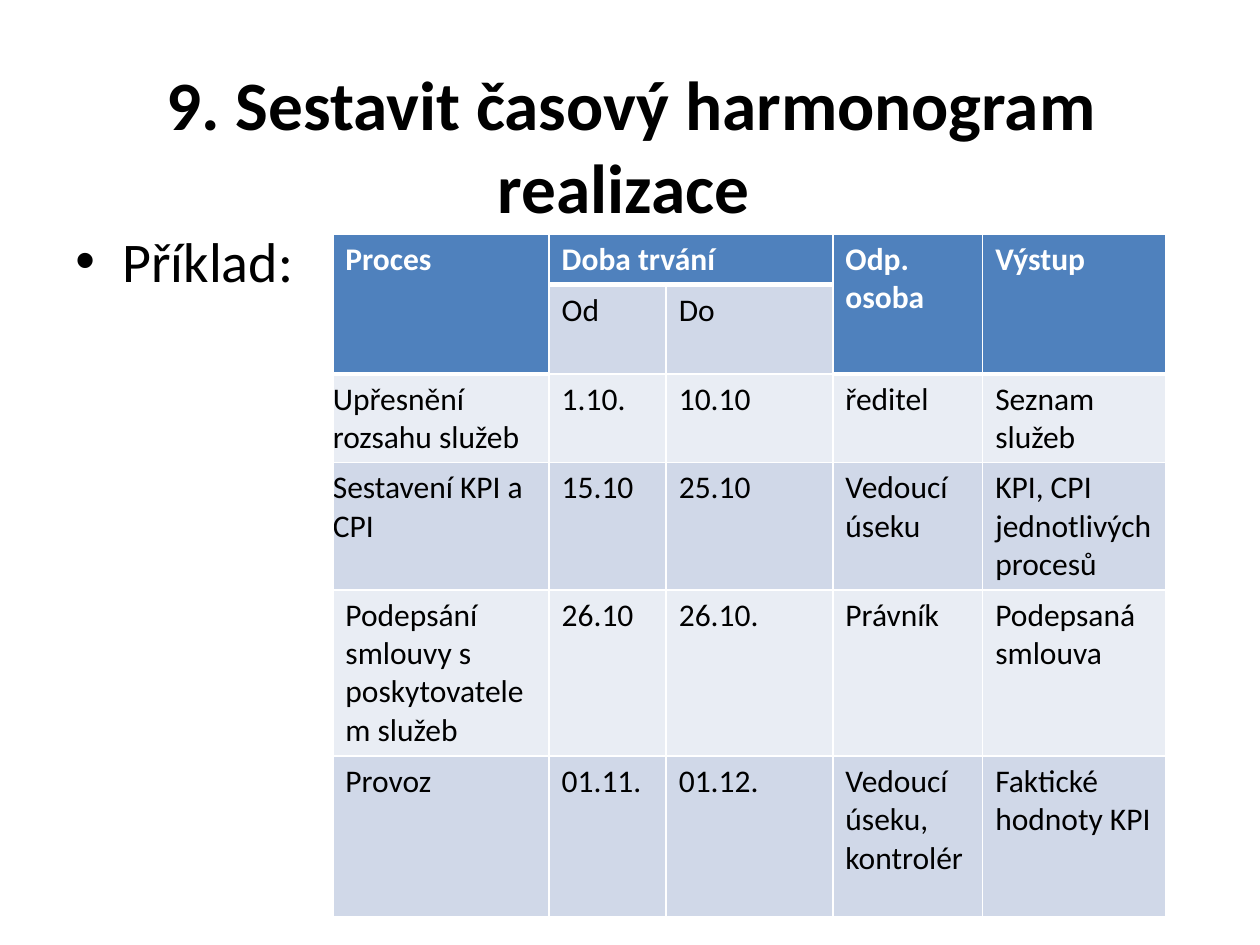
from lxml.etree import SubElement
from pptx import Presentation
from pptx.dml.color import RGBColor
from pptx.enum.text import MSO_ANCHOR as Anchor, PP_ALIGN as Align
from pptx.oxml.ns import qn
from pptx.util import Cm, Pt

# Content
TITLE = "9. Sestavit časový harmonogram realizace "
BODY = "Příklad:"
ROWS = [
    ["Proces", "Doba trvání", "", "Odp. osoba", "Výstup"],
    ["", "Od", "Do", "", ""],
    ["Upřesnění rozsahu služeb", "1.10.", "10.10", "ředitel", "Seznam služeb"],
    ["Sestavení KPI a CPI", "15.10", "25.10", "Vedoucí úseku",
     "KPI, CPI jednotlivých procesů"],
    ["Podepsání smlouvy s poskytovatelem služeb", "26.10", "26.10.", "Právník",
     "Podepsaná smlouva"],
    ["Provoz", "01.11.", "01.12.", "Vedoucí úseku, kontrolér",
     "Faktické hodnoty KPI"],
]
COLUMN_WIDTHS = [4.36, 2.36, 3.36, 3.02, 3.7]
ROW_HEIGHTS = [1.02, 1.8, 1.77, 2.57, 3.35, 3.25]
MERGES = [((0, 0), (1, 0)), ((0, 1), (0, 2)), ((0, 3), (1, 3)), ((0, 4), (1, 4))]
FLUSH_CELLS = {(2, 0), (3, 0)}

FONT = "Calibri"
BLACK, WHITE, BLUE = "000000", "FFFFFF", "4F81BD"
BANDS = ["E9EDF4", "D0D8E8"]


def color(value):
    return RGBColor.from_string(value)


def add_text(paragraph, text, size, fill=BLACK, bold=False):
    run = paragraph.add_run()
    run.text = text
    run.font.name, run.font.size, run.font.bold = FONT, Pt(size), bold
    run.font.color.rgb = color(fill)


def add_box(slide, left, top, width, height, anchor):
    box = slide.shapes.add_textbox(Cm(left), Cm(top), Cm(width), Cm(height))
    frame = box.text_frame
    frame.word_wrap = True
    frame.vertical_anchor = anchor
    return frame.paragraphs[0]


def set_borders(cell, bottom):
    properties = cell._tc.get_or_add_tcPr()
    for side, points in (("L", 1), ("R", 1), ("T", 1), ("B", bottom)):
        line = SubElement(properties, qn(f"a:ln{side}"), w=str(Pt(points)))
        fill = SubElement(line, qn("a:solidFill"))
        SubElement(fill, qn("a:srgbClr"), val=WHITE)


presentation = Presentation()
presentation.slide_width, presentation.slide_height = Cm(25.4), Cm(19.05)
slide = presentation.slides.add_slide(presentation.slide_layouts[6])

# Title
paragraph = add_box(slide, 1.3, 1.32, 22.86, 3.18, Anchor.MIDDLE)
paragraph.alignment = Align.CENTER
add_text(paragraph, TITLE, 39.6, bold=True)

# Bulleted body text
paragraph = add_box(slide, 1.27, 4.45, 22.86, 12.57, Anchor.TOP)
properties = paragraph._p.get_or_add_pPr()
properties.set("marL", str(Cm(0.95)))
properties.set("indent", str(Cm(-0.95)))
SubElement(properties, qn("a:buFont"), typeface="Arial")
SubElement(properties, qn("a:buChar"), char="•")
add_text(paragraph, BODY, 32)

# Schedule table
table = slide.shapes.add_table(
    len(ROWS), len(COLUMN_WIDTHS), Cm(6.71), Cm(4.72),
    Cm(sum(COLUMN_WIDTHS)), Cm(sum(ROW_HEIGHTS))).table
for column, width in zip(table.columns, COLUMN_WIDTHS):
    column.width = Cm(width)
for row, height in zip(table.rows, ROW_HEIGHTS):
    row.height = Cm(height)
for first, last in MERGES:
    table.cell(*first).merge(table.cell(*last))

for r, texts in enumerate(ROWS):
    for c, text in enumerate(texts):
        cell = table.cell(r, c)
        header = r == 0 or (r == 1 and c not in (1, 2))
        set_borders(cell, 3 if header else 1)
        cell.fill.solid()
        cell.fill.fore_color.rgb = color(BLUE if header else BANDS[r % 2])
        if (r, c) in FLUSH_CELLS:
            cell.margin_left = cell.margin_right = Cm(0)
        if text:
            add_text(cell.text_frame.paragraphs[0], text, 18,
                     WHITE if header else BLACK, header)

presentation.save("out.pptx")
